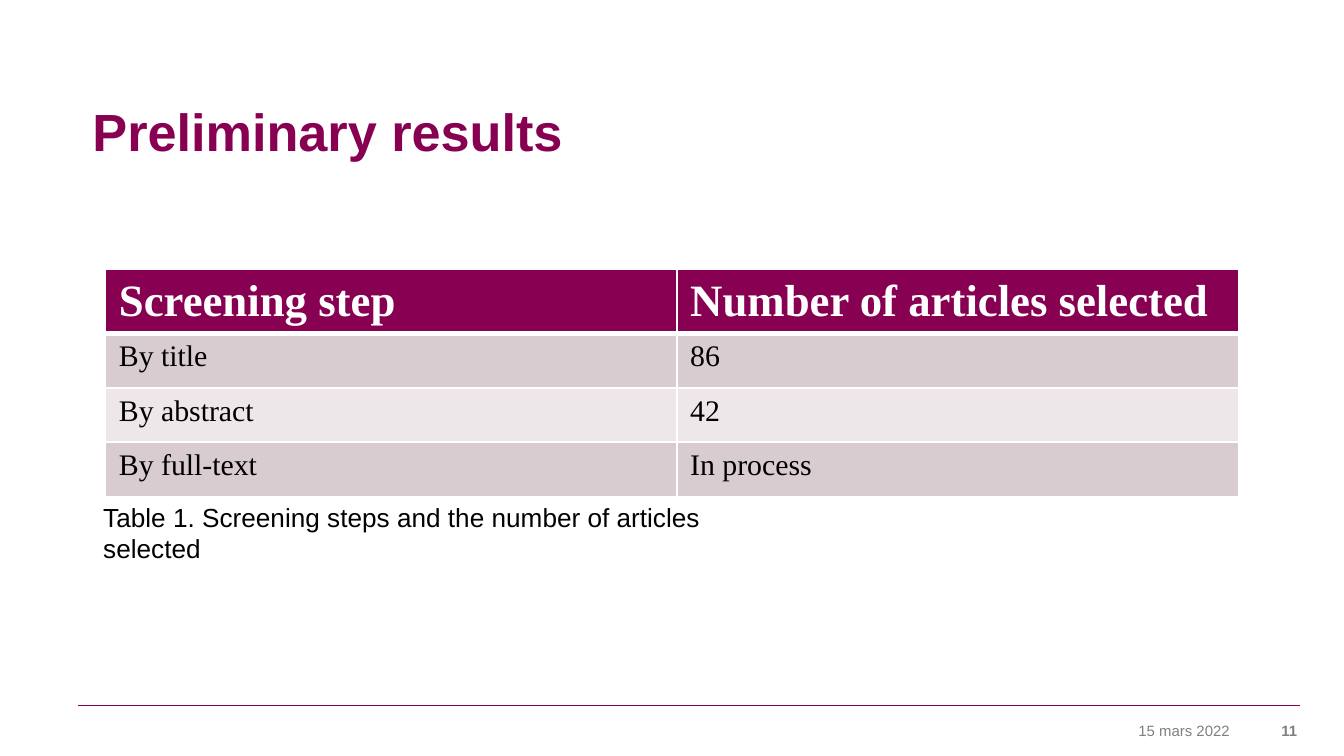
"""Build the slide with the preliminary screening results."""
import pptx
import pptx.dml.color
import pptx.enum.shapes
import pptx.enum.text
import pptx.oxml
import pptx.oxml.ns
import pptx.util

RGBColor = pptx.dml.color.RGBColor
PLUM = RGBColor(0x87, 0x00, 0x52)
GRAY = RGBColor(0x80, 0x80, 0x80)
DARK = RGBColor(0xD9, 0xCC, 0xD1)
LIGHT = RGBColor(0xED, 0xE7, 0xE9)
WHITE = RGBColor(0xFF, 0xFF, 0xFF)
BLACK = RGBColor(0x00, 0x00, 0x00)
PX = 4572
ALIGN = pptx.enum.text.PP_ALIGN
ANCHOR = pptx.enum.text.MSO_ANCHOR


def style(para, text, face, size, color, bold):
    para.text = text
    para.font.name = face
    para.font.size = pptx.util.Pt(size)
    para.font.bold = bold
    para.font.color.rgb = color


def border(cell, side, width):
    props = cell._tc.get_or_add_tcPr()
    line = pptx.oxml.parse_xml(
        f'<a:{side} {pptx.oxml.ns.nsdecls("a")} w="{pptx.util.Pt(width)}">'
        f'<a:solidFill><a:srgbClr val="{WHITE}"/></a:solidFill></a:{side}>')
    props.append(line)


deck = pptx.Presentation()
deck.slide_width = 2000 * PX
deck.slide_height = 1125 * PX
slide = deck.slides.add_slide(deck.slide_layouts[6])
shapes = slide.shapes

rule = shapes.add_connector(pptx.enum.shapes.MSO_CONNECTOR.STRAIGHT,
                            116 * PX, 1050 * PX, 1934 * PX, 1050 * PX)
rule.line.color.rgb = PLUM
rule.line.width = pptx.util.Pt(0.75)
rule._element.spPr.append(pptx.oxml.parse_xml(
    f'<a:effectLst {pptx.oxml.ns.nsdecls("a")}/>'))

texts = [
    ("15 mars 2022", (1434, 1062, 416, 38), 8, GRAY, False, ALIGN.RIGHT, ANCHOR.BOTTOM, 0),
    ("11", (1800, 1062, 150, 38), 8, GRAY, True, ALIGN.RIGHT, ANCHOR.BOTTOM, 0),
    ("Preliminary results", (118, 138, 1700, 108), 28, PLUM, True,
     ALIGN.LEFT, ANCHOR.BOTTOM, 5),
    ("Table 1. Screening steps and the number of articles selected",
     (134, 736, 1080, 68), 14, BLACK, False, ALIGN.LEFT, ANCHOR.TOP, 10),
]
for text, place, size, color, bold, align, anchor, inset in texts:
    frame = shapes.add_textbox(*(n * PX for n in place)).text_frame
    frame.word_wrap = True
    frame.vertical_anchor = anchor
    frame.margin_bottom = inset * PX
    para = frame.paragraphs[0]
    style(para, text, "Arial", size, color, bold)
    para.alignment = align

rows = [
    ("Screening step", "Number of articles selected"),
    ("By title", "86"),
    ("By abstract", "42"),
    ("By full-text", "In process"),
]
table = shapes.add_table(len(rows), 2, 157 * PX, 401 * PX, 1686 * PX, 324 * PX).table
for col, width in zip(table.columns, (850, 836)):
    col.width = width * PX
for r, row in enumerate(rows):
    table.rows[r].height = 81 * PX
    head = r == 0
    for c, text in enumerate(row):
        cell = table.cell(r, c)
        cell.margin_bottom = 5 * PX
        style(cell.text_frame.paragraphs[0], text, "Times New Roman",
              24 if head else 16, WHITE if head else BLACK, head)
        for side in ("lnL", "lnR", "lnT", "lnB"):
            thick = (r, side) in ((0, "lnB"), (1, "lnT"))
            border(cell, side, 3 if thick else 1)
        cell.fill.solid()
        cell.fill.fore_color.rgb = PLUM if head else DARK if r % 2 else LIGHT

deck.save("out.pptx")
